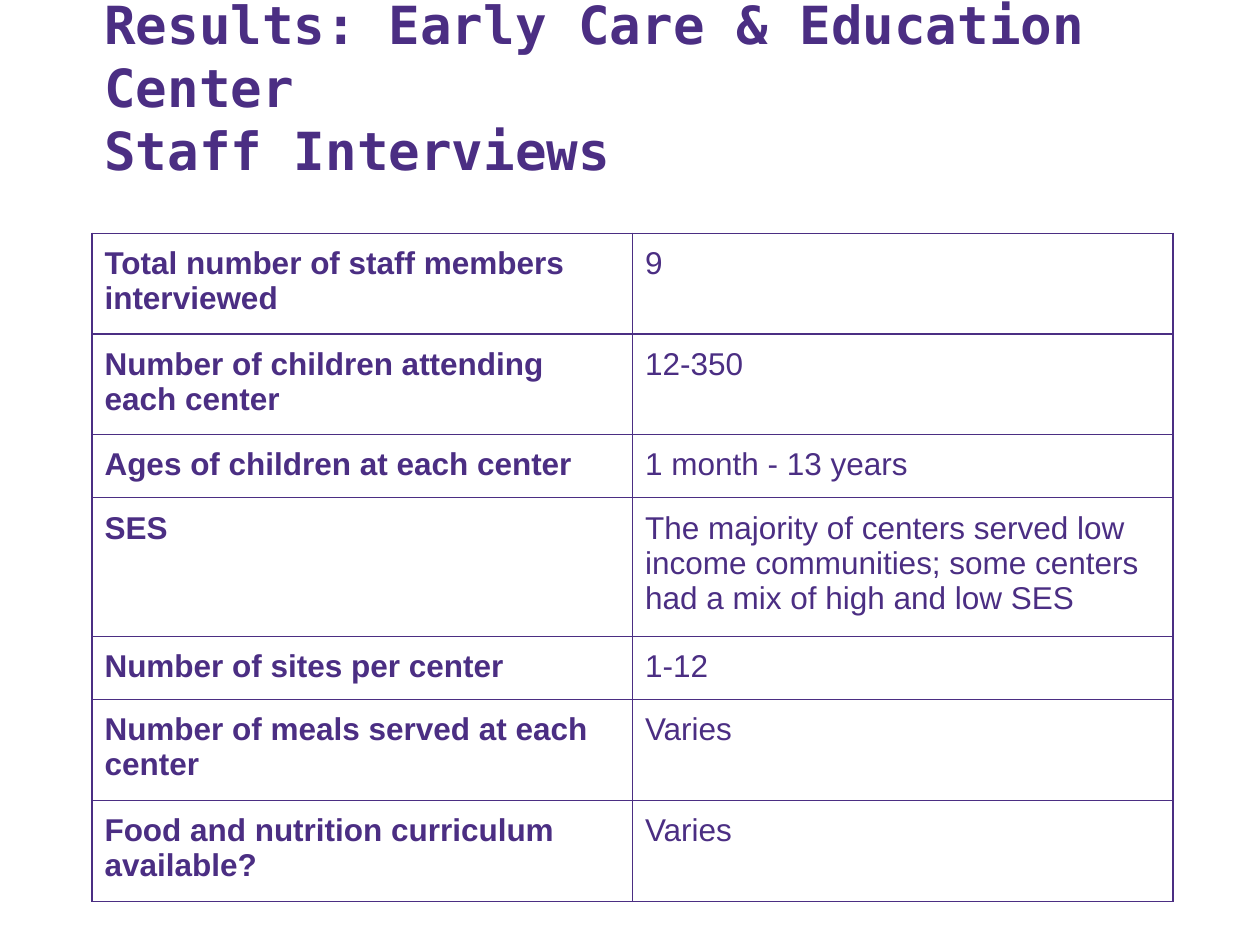
from typing import NamedTuple

from lxml.etree import SubElement
from pptx import Presentation
from pptx.dml.color import RGBColor
from pptx.enum.text import MSO_ANCHOR as Anchor
from pptx.oxml.ns import qn
from pptx.util import Inches, Pt

PURPLE = "4B2E83"
WHITE = "FFFFFF"
BORDER_WIDTH = Pt(0.75)
CELL_MARGIN = Inches(0.1)
TABLE_LEFT, TABLE_TOP, COLUMN_WIDTH = 0.73, 1.85, 4.29


class Finding(NamedTuple):
    topic: str
    answer: str
    height: float


TITLE_LINES = ["Results: Early Care & Education Center", "Staff Interviews"]
FINDINGS = [
    Finding("Total number of staff members interviewed", "9", 0.79),
    Finding("Number of children attending each center", "12-350", 0.79),
    Finding("Ages of children at each center", "1 month - 13 years", 0.49),
    Finding(
        "SES",
        "The majority of centers served low income communities; "
        "some centers had a mix of high and low SES",
        1.08,
    ),
    Finding("Number of sites per center", "1-12", 0.49),
    Finding("Number of meals served at each center", "Varies", 0.79),
    Finding("Food and nutrition curriculum available?", "Varies", 0.79),
]


def color(hex_code: str) -> RGBColor:
    return RGBColor.from_string(hex_code)


def add_run(paragraph, text: str, font_name: str, size: float, bold: bool) -> None:
    run = paragraph.add_run()
    run.text = text
    run.font.name = font_name
    run.font.size = Pt(size)
    run.font.bold = bold
    run.font.color.rgb = color(PURPLE)


def add_borders(cell) -> None:
    """Rule all four sides; call before filling, as the schema puts lines first."""
    properties = cell._tc.get_or_add_tcPr()
    for side in ("a:lnL", "a:lnR", "a:lnT", "a:lnB"):
        line = SubElement(properties, qn(side), w=str(BORDER_WIDTH))
        fill = SubElement(line, qn("a:solidFill"))
        SubElement(fill, qn("a:srgbClr"), val=PURPLE)


def write_cell(cell, text: str, bold: bool) -> None:
    cell.margin_left = cell.margin_right = CELL_MARGIN
    cell.margin_top = cell.margin_bottom = CELL_MARGIN
    cell.vertical_anchor = Anchor.TOP
    add_borders(cell)
    cell.fill.solid()
    cell.fill.fore_color.rgb = color(WHITE)
    add_run(cell.text_frame.paragraphs[0], text, "Arial", 18, bold)


def add_title(slide, lines: list[str]) -> None:
    title = slide.shapes.add_textbox(
        Inches(0.73), Inches(0.41), Inches(8.95), Inches(1.08)
    ).text_frame
    title.word_wrap = True
    title.vertical_anchor = Anchor.BOTTOM
    for index, line in enumerate(lines):
        paragraph = title.add_paragraph() if index else title.paragraphs[0]
        add_run(paragraph, line, "DejaVu Sans Mono", 30, True)


def add_findings(slide, findings: list[Finding]) -> None:
    table = slide.shapes.add_table(
        len(findings), 2,
        Inches(TABLE_LEFT), Inches(TABLE_TOP),
        Inches(2 * COLUMN_WIDTH), Inches(sum(f.height for f in findings)),
    ).table
    table.first_row = table.horz_banding = False
    for column in table.columns:
        column.width = Inches(COLUMN_WIDTH)
    for row, finding in zip(table.rows, findings):
        row.height = Inches(finding.height)
        topic_cell, answer_cell = row.cells
        write_cell(topic_cell, finding.topic, True)
        write_cell(answer_cell, finding.answer, False)


def main() -> None:
    deck = Presentation()
    deck.slide_width, deck.slide_height = Inches(10), Inches(7.5)
    slide = deck.slides.add_slide(deck.slide_layouts[6])
    add_title(slide, TITLE_LINES)
    add_findings(slide, FINDINGS)
    deck.save("out.pptx")


if __name__ == "__main__":
    main()
